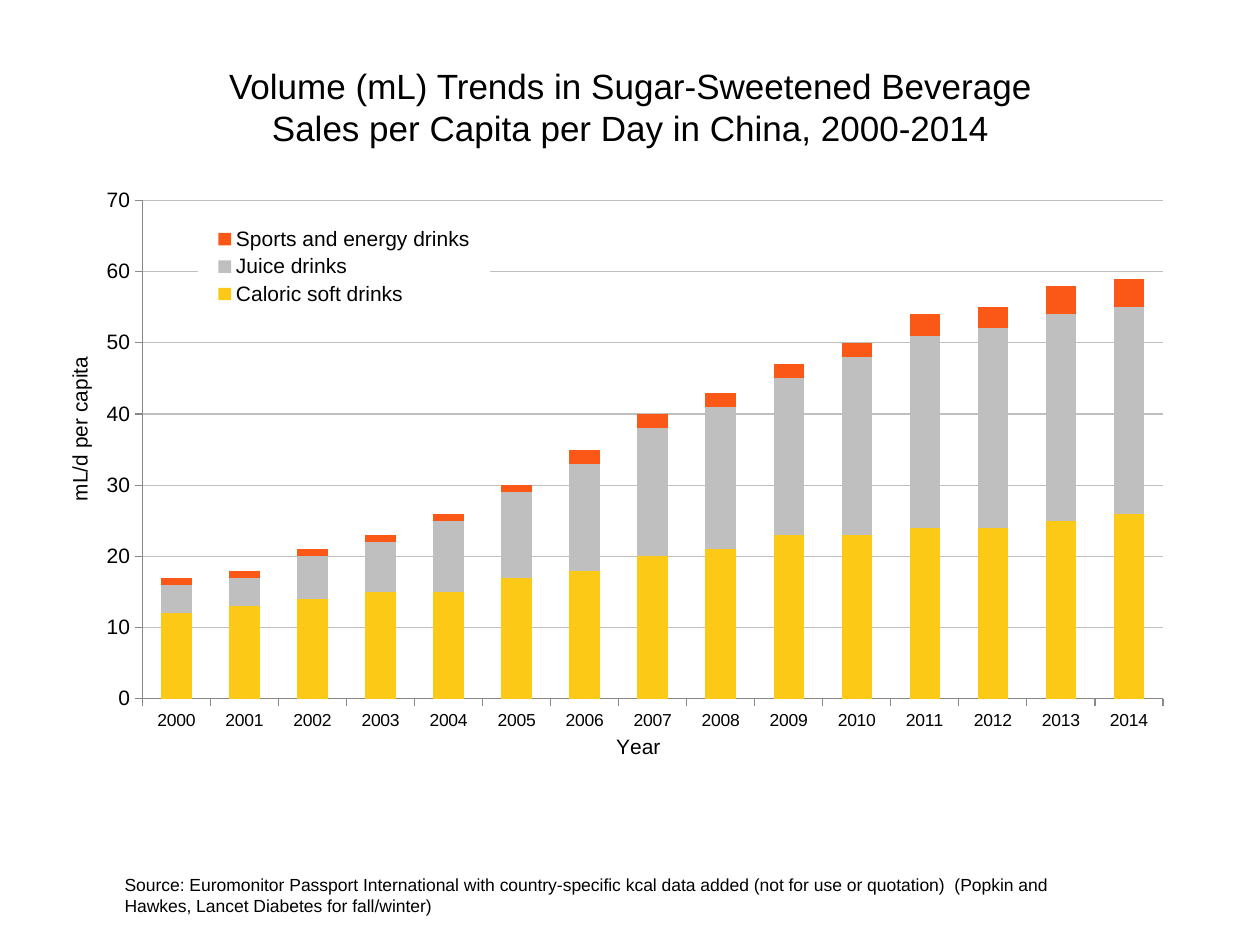
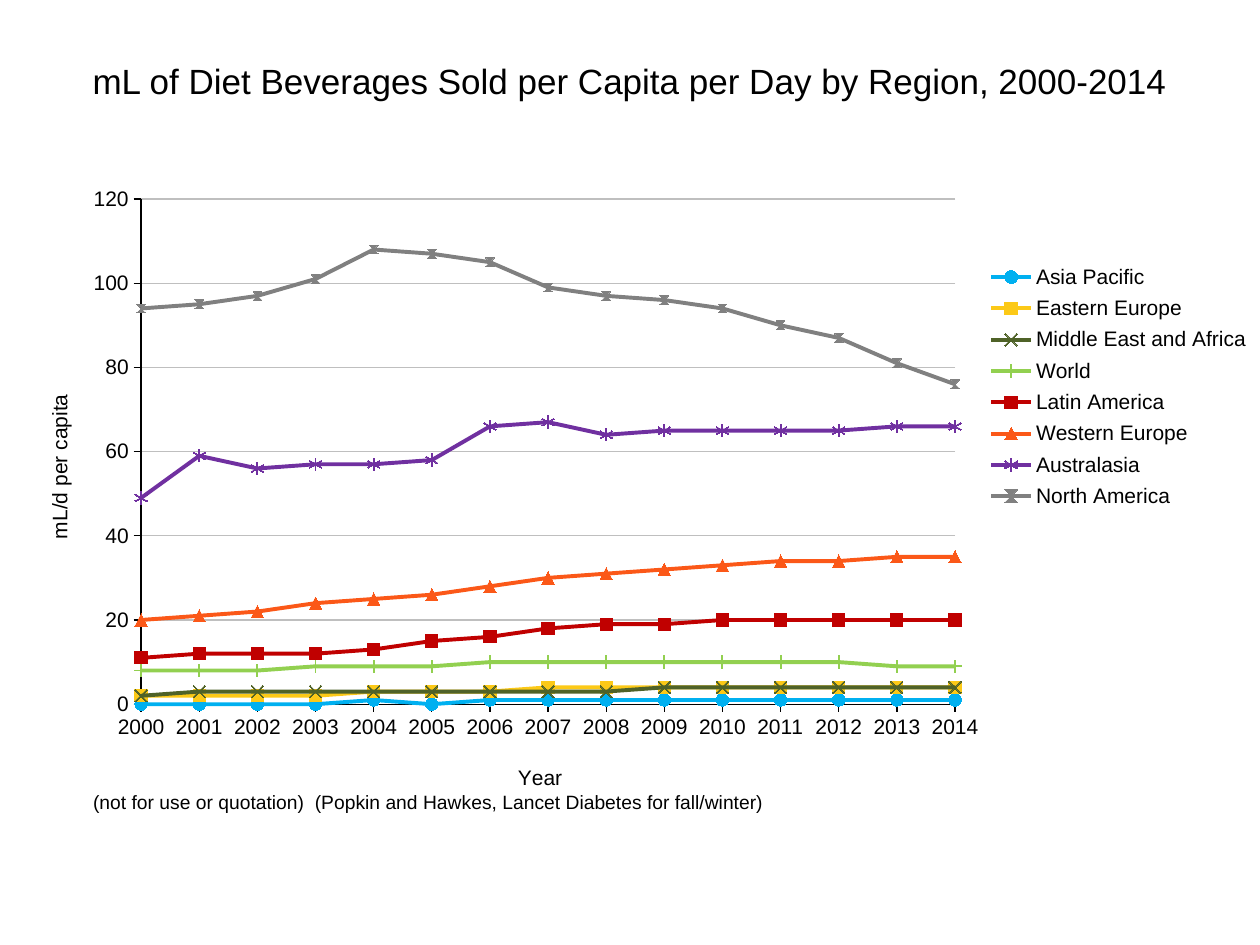
from lxml import etree
from pptx import Presentation
from pptx import util as u
from pptx.chart import data as cd
from pptx.dml import color as dc
from pptx.enum import chart as ec
from pptx.enum import text
from pptx.oxml import ns

HUES = {
    "ink": "000000", "paper": "FFFFFF", "grid": "BFBFBF", "axis": "888888",
    "gold": "FCC917", "silver": "BFBFBF", "orange": "FB5818", "blue": "00B0F0",
    "olive": "4F6228", "green": "92D050", "red": "C00000", "purple": "7030A0",
    "grey": "808080",
}
YEARS = [str(year) for year in range(2000, 2015)]
MARK = ec.XL_MARKER_STYLE
DRINKS = [
    ("Caloric soft drinks", "gold", [12, 13, 14, 15, 15, 17, 18, 20, 21, 23, 23, 24, 24, 25, 26]),
    ("Juice drinks", "silver", [4, 4, 6, 7, 10, 12, 15, 18, 20, 22, 25, 27, 28, 29, 29]),
    ("Sports and energy drinks", "orange", [1, 1, 1, 1, 1, 1, 2, 2, 2, 2, 2, 3, 3, 4, 4]),
]
REGIONS = [
    ("Asia Pacific", "blue", [0, 0, 0, 0, 1, 0, 1, 1, 1, 1, 1, 1, 1, 1, 1]),
    ("Eastern Europe", "gold", [2, 2, 2, 2, 3, 3, 3, 4, 4, 4, 4, 4, 4, 4, 4]),
    ("Middle East and Africa", "olive", [2, 3, 3, 3, 3, 3, 3, 3, 3, 4, 4, 4, 4, 4, 4]),
    ("World", "green", [8, 8, 8, 9, 9, 9, 10, 10, 10, 10, 10, 10, 10, 9, 9]),
    ("Latin America", "red", [11, 12, 12, 12, 13, 15, 16, 18, 19, 19, 20, 20, 20, 20, 20]),
    ("Western Europe", "orange", [20, 21, 22, 24, 25, 26, 28, 30, 31, 32, 33, 34, 34, 35, 35]),
    ("Australasia", "purple", [49, 59, 56, 57, 57, 58, 66, 67, 64, 65, 65, 65, 65, 66, 66]),
    ("North America", "grey", [94, 95, 97, 101, 108, 107, 105, 99, 97, 96, 94, 90, 87, 81, 76]),
]
MARKS = [MARK.CIRCLE, MARK.SQUARE, MARK.X, MARK.PLUS, MARK.SQUARE, MARK.TRIANGLE, MARK.STAR, None]
OPEN = {MARK.X, MARK.PLUS, MARK.STAR}


def put(item, **vals):
    for key, val in vals.items():
        setattr(item, key, val)


def hue(name):
    return dc.RGBColor.from_string(HUES[name])


def fill(part, name):
    part.solid()
    part.fore_color.rgb = hue(name)


def stroke(line, name, width):
    fill(line.fill, name)
    line.width = u.Pt(width)


class Deck:
    font = "Arial"

    def __init__(self):
        self.prs = Presentation()
        put(self.prs, slide_width=u.Inches(10), slide_height=u.Inches(7.5))

    def page(self):
        self.slide = self.prs.slides.add_slide(self.prs.slide_layouts[5])

    def type(self, font, size):
        put(font, name=self.font, size=u.Pt(size), bold=False)
        font.color.rgb = hue("ink")

    def title(self, words, box):
        head = self.slide.shapes.title
        put(head, **dict(zip(("left", "top", "width", "height"), map(u.Inches, box))))
        put(head.text_frame, text=words, word_wrap=True,
            vertical_anchor=text.MSO_ANCHOR.MIDDLE, auto_size=text.MSO_AUTO_SIZE.NONE)
        para = head.text_frame.paragraphs[0]
        para.alignment = text.PP_ALIGN.CENTER
        self.type(para.font, 20)
        self.slide.shapes._spTree.append(head._element)

    def note(self, words, box, size):
        frame = self.slide.shapes.add_textbox(*map(u.Inches, box)).text_frame
        put(frame, text=words, word_wrap=True)
        self.type(frame.paragraphs[0].font, size)

    def place(self, node, area, after=None, inner=False):
        left, top, wide, high = self.box
        for old in node.findall(ns.qn("c:layout")):
            node.remove(old)
        lay = etree.Element(ns.qn("c:layout"))
        form = etree.SubElement(lay, ns.qn("c:manualLayout"))
        rules = {"layoutTarget": "inner"} if inner else {}
        rules.update(xMode="edge", yMode="edge")
        rules.update(x=(area[0] - left) / wide, y=(area[1] - top) / high)
        if len(area) == 4:
            rules.update(w=area[2] / wide, h=area[3] / high)
        for tag, val in rules.items():
            etree.SubElement(form, ns.qn("c:" + tag)).set("val", str(val))
        if after:
            node.find(ns.qn(after)).addnext(lay)
        else:
            node.insert(0, lay)

    def chart(self, kind, rows, box, plot):
        self.box = box
        data = cd.CategoryChartData()
        data.categories = YEARS
        for name, _, vals in rows:
            data.add_series(name, vals)
        chart = self.slide.shapes.add_chart(kind, *map(u.Inches, box), data).chart
        chart.has_title = False
        self.type(chart.font, 10)
        self.place(chart._chartSpace.chart.plotArea, plot, inner=True)
        chart.plots[0].vary_by_categories = False
        return chart

    def axis(self, axis, words, spot, size, line):
        put(axis, major_tick_mark=ec.XL_TICK_MARK.OUTSIDE,
            minor_tick_mark=ec.XL_TICK_MARK.NONE, has_title=True)
        self.type(axis.tick_labels.font, size)
        stroke(axis.format.line, line, 0.75)
        label = axis.axis_title
        label.text_frame.text = words
        self.type(label.text_frame.paragraphs[0].font, 12)
        self.place(label._element, spot, after="c:tx")
        return label

    def axes(self, chart, top, step, form, year, unit, size, line):
        self.axis(chart.category_axis, "Year", year, size, line)
        axis = chart.value_axis
        label = self.axis(axis, "mL/d per capita", unit, 12, line)
        label._element.find(".//" + ns.qn("a:bodyPr")).set("rot", "-5400000")
        put(axis, minimum_scale=0, maximum_scale=top, major_unit=step,
            has_major_gridlines=True)
        put(axis.tick_labels, number_format=form, number_format_is_linked=False)
        stroke(axis.major_gridlines.format.line, "grid", 0.75)

    def legend(self, chart, area):
        chart.has_legend = True
        key = chart.legend
        put(key, position=ec.XL_LEGEND_POSITION.RIGHT, include_in_layout=False)
        self.type(key.font, 12)
        node = key._element
        self.place(node, area, after="c:legendPos")
        look = etree.Element(ns.qn("c:spPr"))
        solid = etree.SubElement(look, ns.qn("a:solidFill"))
        etree.SubElement(solid, ns.qn("a:srgbClr")).set("val", HUES["paper"])
        node.find(ns.qn("c:overlay")).addnext(look)

    def bars(self, chart, rows):
        put(chart.plots[0], gap_width=124, overlap=100)
        for ser, (_, tint, _) in zip(chart.series, rows):
            fill(ser.format.fill, tint)

    def lines(self, chart, rows, marks):
        node = chart.value_axis._element
        for old in node.findall(ns.qn("c:crossBetween")):
            node.remove(old)
        cross = etree.Element(ns.qn("c:crossBetween"), val="midCat")
        node.xpath("c:crossAx | c:crosses")[-1].addnext(cross)
        for ser, (_, tint, _), mark in zip(chart.series, rows, marks):
            ser.smooth = False
            stroke(ser.format.line, tint, 2.25)
            if mark is None:
                continue
            put(ser.marker, style=mark, size=7)
            look = ser.marker.format
            stroke(look.line, tint, 0.75)
            if mark in OPEN:
                look.fill.background()
            else:
                fill(look.fill, tint)


def china(deck):
    deck.page()
    chart = deck.chart(ec.XL_CHART_TYPE.COLUMN_STACKED, DRINKS,
                       (0.04, 0.52, 9.72, 5.55), (1.13, 1.6, 8.1, 3.99))
    deck.axes(chart, 70, 10, "#,##0", (4.86, 5.84), (0.5, 2.83), 10, "axis")
    deck.bars(chart, DRINKS)
    deck.legend(chart, (1.57, 1.78, 2.32, 0.7))
    deck.note("Source: Euromonitor Passport International with country-specific kcal data "
              "added (not for use or quotation)  (Popkin and Hawkes, Lancet Diabetes for "
              "fall/winter)", (0.89, 6.89, 7.65, 0.44), 10)
    deck.title("Volume (mL) Trends in Sugar-Sweetened Beverage Sales per Capita per Day "
               "in China, 2000-2014", (1.35, 0.14, 7.31, 1.41))


def diet(deck):
    deck.page()
    chart = deck.chart(ec.XL_CHART_TYPE.LINE_MARKERS, REGIONS,
                       (0, 0.83, 10, 6.08), (1.12, 1.58, 6.46, 4.01))
    deck.axes(chart, 120, 20, "0", (4.08, 6.04), (0.34, 3.1), 12, "ink")
    deck.lines(chart, REGIONS, MARKS)
    deck.legend(chart, (7.76, 2.04, 2.24, 2.06))
    deck.title("mL of Diet Beverages Sold per Capita per Day by Region, 2000-2014",
               (0, 0, 10, 1.27))
    deck.note("(not for use or quotation)  (Popkin and Hawkes, Lancet Diabetes for "
              "fall/winter)", (0.64, 6.22, 8.58, 0.29), 11)


def main():
    deck = Deck()
    china(deck)
    diet(deck)
    deck.prs.save("out.pptx")


if __name__ == "__main__":
    main()
